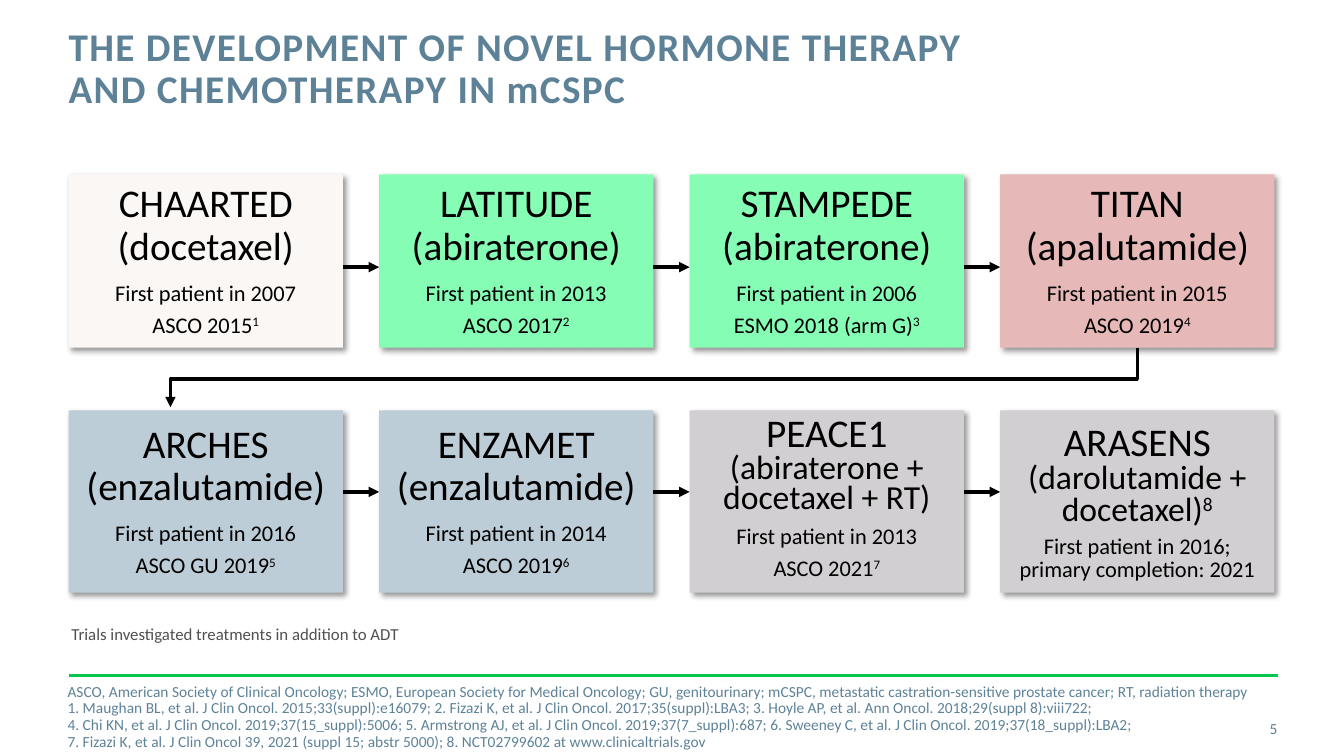
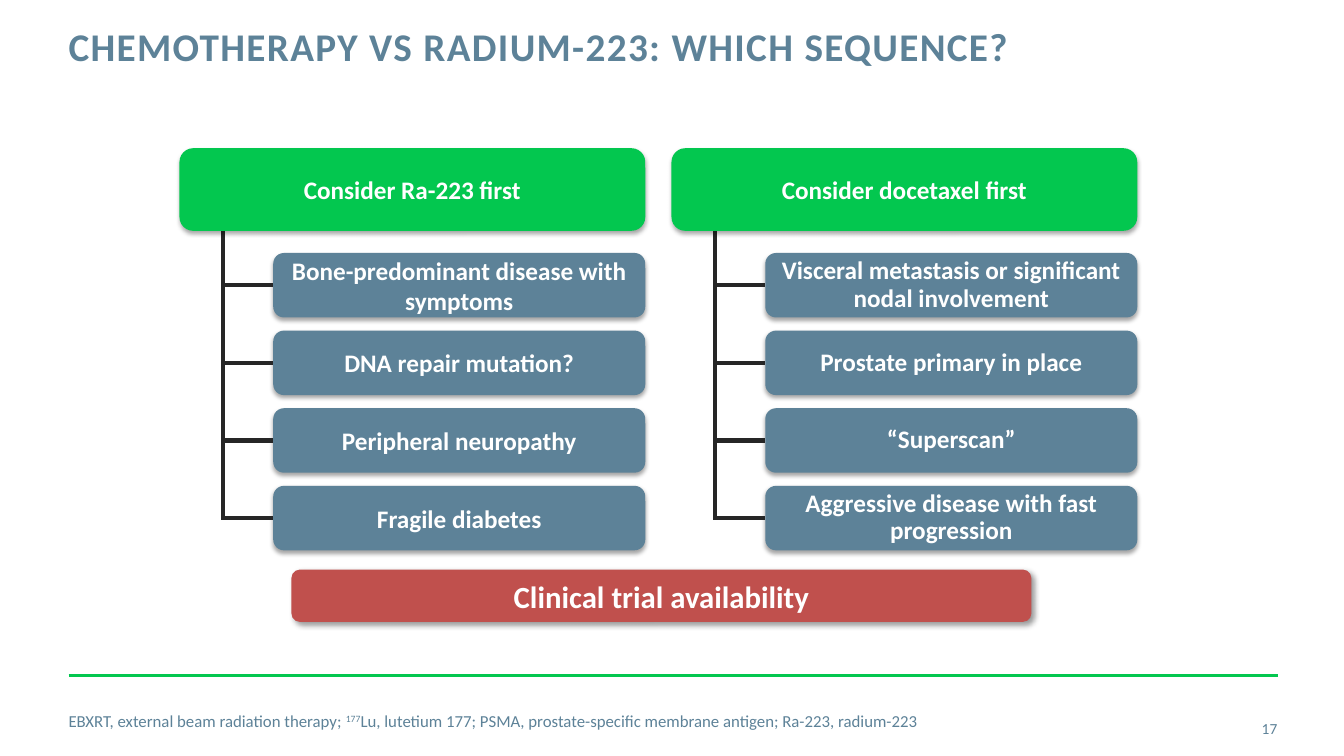
from lxml.etree import SubElement
from pptx import Presentation
from pptx.dml.color import RGBColor
from pptx.enum.shapes import MSO_CONNECTOR, MSO_SHAPE
from pptx.enum.text import MSO_ANCHOR, MSO_AUTO_SIZE, PP_ALIGN
from pptx.oxml.ns import qn
from pptx.util import Pt

PX = 9144  # 100 px to the inch
FONT = "Calibri"
SLATE, GREEN, RED = "5D8298", "03C74F", "C0504D"
BLACK, WHITE, GREY, CHARCOAL = "000000", "FFFFFF", "505050", "262626"
OFF_WHITE, MINT, PINK, PALE_BLUE, SILVER = "FBF7F5", "86FDB4", "E6B9B8", "BDCDD7", "D1CFD1"
# Shadows: opacity %, blur pt, distance pt, direction in degrees
DIAGONAL_SHADOW = (40, 4, 3, 45)
DROP_SHADOW = (35, 3.1, 1.8, 90)


def px(*lengths):
    return [round(length * PX) for length in lengths]


def colour(value):
    return RGBColor.from_string(value)


# Text
def write(para, *spans, ink, bold=False, align=PP_ALIGN.LEFT, leading=None, after=0):
    """Add (text, size) spans; text between ^ marks is raised."""
    para.alignment = align
    para.line_spacing = leading
    para.space_before, para.space_after = Pt(0), Pt(after)
    for text, size in spans:
        for part, piece in enumerate(text.split("^")):
            for row, line in enumerate(piece.split("\n")):
                if row:
                    para.add_line_break()
                if not line:
                    continue
                span = para.add_run()
                span.text = line
                span.font.name, span.font.size, span.font.bold = FONT, Pt(size), bold
                span.font.color.rgb = colour(ink)
                if part % 2:
                    span.font._element.set("baseline", "30000")


def set_frame(box, anchor, margins=(0, 0, 0, 0)):
    frame = box.text_frame
    frame.word_wrap = True
    frame.auto_size = MSO_AUTO_SIZE.NONE
    frame.vertical_anchor = anchor
    (frame.margin_left, frame.margin_top,
     frame.margin_right, frame.margin_bottom) = px(*margins)
    return frame


def place(box, bounds):
    box.left, box.top, box.width, box.height = px(*bounds)


# Shapes and lines
def add_panel(page, kind, bounds, fill, shadow, margins):
    panel = page.shapes.add_shape(kind, *px(*bounds))
    panel.fill.solid()
    panel.fill.fore_color.rgb = colour(fill)
    panel.line.fill.background()
    panel.shadow.inherit = False
    opacity, blur, distance, direction = shadow
    effects = panel._element.spPr.find(qn("a:effectLst"))
    outer = SubElement(effects, qn("a:outerShdw"), blurRad=str(Pt(blur)), dist=str(Pt(distance)),
                       dir=str(direction * 60000), algn="t", rotWithShape="0")
    tint = SubElement(outer, qn("a:srgbClr"), val=BLACK)
    SubElement(tint, qn("a:alpha"), val=str(opacity * 1000))
    set_frame(panel, MSO_ANCHOR.MIDDLE, margins)
    return panel


def style_line(line, ink, width, arrow=False):
    line.line.color.rgb = colour(ink)
    line.line.width = Pt(width)
    if arrow:
        SubElement(line._element.spPr.find(qn("a:ln")), qn("a:tailEnd"), type="triangle")


def add_line(page, start, end, ink, width, arrow=False):
    line = page.shapes.add_connector(MSO_CONNECTOR.STRAIGHT, *px(*start, *end))
    style_line(line, ink, width, arrow)
    SubElement(line._element.spPr, qn("a:effectLst"))
    return line


# Shared slide frame: title, green rule, footnote and page number
def add_page(deck, title, number, footnote, footnote_bounds, size, leading):
    page = deck.slides.add_slide(deck.slide_layouts[1])
    add_line(page, (68, 670), (1268, 670), GREEN, 2)

    heading = page.shapes.title
    place(heading, (68, 27, 956, 88))
    para = set_frame(heading, MSO_ANCHOR.TOP).paragraphs[0]
    write(para, (title, 28), ink=SLATE, bold=True, leading=Pt(30))
    for span in para.runs:
        span.font._element.set("spc", "100")

    body = page.placeholders[1]
    place(body, footnote_bounds)
    frame = set_frame(body, MSO_ANCHOR.MIDDLE)
    for index, text in enumerate(footnote):
        para = frame.add_paragraph() if index else frame.paragraphs[0]
        properties = para._p.get_or_add_pPr()
        properties.set("marL", "0")
        properties.set("indent", "0")
        SubElement(properties, qn("a:buNone"))
        write(para, (text, size), ink=SLATE, leading=leading, after=3 if index else 0)

    number_box = page.shapes.add_textbox(*px(1181, 703, 86, 40))
    frame = set_frame(number_box, MSO_ANCHOR.MIDDLE)
    write(frame.paragraphs[0], (number, 11), ink=SLATE, align=PP_ALIGN.RIGHT)
    return page


# Trial timeline
def add_trial(page, bounds, fill, paragraphs, top_margin=9):
    panel = add_panel(page, MSO_SHAPE.RECTANGLE, bounds, fill, DIAGONAL_SHADOW,
                      (9, top_margin, 9, 9))
    frame = panel.text_frame
    for index, (spans, leading, after) in enumerate(paragraphs):
        para = frame.add_paragraph() if index else frame.paragraphs[0]
        write(para, *spans, ink=BLACK, align=PP_ALIGN.CENTER, leading=leading, after=after)


def lines_of(*texts, size=16):
    return [([(text, size)], 0.9, 0.35 * size) for text in texts]


def trial_text(name, *details):
    return lines_of(name, size=28) + lines_of(*details)


def add_trial_row(page, left, top, height, arrow_y, trials):
    width, pitch = 272, 308
    for column, trial in enumerate(trials):
        x = left + column * pitch
        add_trial(page, (x, top, width, height), *trial)
        if column:
            add_line(page, (x - pitch + width, arrow_y), (x, arrow_y), BLACK, 2.5, True)


def add_return_arrow(page, start, turn_y, end):
    points = [px(*point) for point in (start, (start[0], turn_y), (end[0], turn_y), end)]
    builder = page.shapes.build_freeform(*points[0], scale=1.0)
    builder.add_line_segments(points[1:], close=False)
    arrow = builder.convert_to_shape()
    arrow.fill.background()
    arrow.shadow.inherit = False
    style_line(arrow, BLACK, 2.5, True)


def add_trials_page(deck):
    page = add_page(
        deck, "THE DEVELOPMENT OF NOVEL HORMONE THERAPY AND CHEMOTHERAPY IN mCSPC", "5",
        ["ASCO, American Society of Clinical Oncology; ESMO, European Society for Medical Oncology; "
         "GU, genitourinary; mCSPC, metastatic castration-sensitive prostate cancer; "
         "RT, radiation therapy",
         "1. Maughan BL, et al. J Clin Oncol. 2015;33(suppl):e16079; "
         "2. Fizazi K, et al. J Clin Oncol. 2017;35(suppl):LBA3; "
         "3. Hoyle AP, et al. Ann Oncol. 2018;29(suppl 8):viii722;\n"
         "4. Chi KN, et al. J Clin Oncol. 2019;37(15_suppl):5006; "
         "5. Armstrong AJ, et al. J Clin Oncol. 2019;37(7_suppl):687; "
         "6. Sweeney C, et al. J Clin Oncol. 2019;37(18_suppl):LBA2;\n"
         "7. Fizazi K, et al. J Clin Oncol 39, 2021 (suppl 15; abstr 5000); "
         "8. NCT02799602 at www.clinicaltrials.gov"],
        (67, 670, 1200, 83), 11, 0.9)

    add_trial_row(page, 68, 173, 172, 265, [
        (OFF_WHITE, trial_text("CHAARTED\n(docetaxel)", "First patient in 2007", "ASCO 2015^1")),
        (MINT, trial_text("LATITUDE\n(abiraterone)", "First patient in 2013", "ASCO 2017^2")),
        (MINT, trial_text("STAMPEDE\n(abiraterone)", "First patient in 2006",
                          "ESMO 2018 (arm G)^3")),
        (PINK, trial_text("TITAN\n(apalutamide)", "First patient in 2015", "ASCO 2019^4")),
    ])
    add_return_arrow(page, (1128, 345), 376, (169, 404))

    # Combination trials use tighter fixed leading
    peace = [([("PEACE1\n", 28), ("(abiraterone + docetaxel + RT)", 24)], Pt(21.8), 6)]
    peace += lines_of("First patient in 2013", "ASCO 2021^7")
    arasens = [([("ARASENS\n", 28), ("(darolutamide + docetaxel)^8", 24)], Pt(22.8), 6),
               ([("First patient in 2016;\nprimary completion: 2021", 16)], Pt(16.2), 5.6)]
    add_trial_row(page, 68, 407, 181, 488, [
        (PALE_BLUE, trial_text("ARCHES\n(enzalutamide)", "First patient in 2016",
                               "ASCO GU 2019^5")),
        (PALE_BLUE, trial_text("ENZAMET\n(enzalutamide)", "First patient in 2014",
                               "ASCO 2019^6")),
        (SILVER, peace, 12),
        (SILVER, arasens, 20),
    ])

    # Remark under the timeline
    remark = page.shapes.add_textbox(*px(61, 614, 349, 30))
    remark.text_frame.word_wrap = False
    write(remark.text_frame.paragraphs[0],
          ("Trials investigated treatments in addition to ADT", 12), ink=GREY)


# Treatment sequence
def add_label(page, bounds, fill, text, size=18, leading=None, shadow=DROP_SHADOW):
    label = add_panel(page, MSO_SHAPE.ROUNDED_RECTANGLE, bounds, fill, shadow, (10, 5, 10, 5))
    write(label.text_frame.paragraphs[0], (text, size), ink=WHITE, bold=True,
          align=PP_ALIGN.CENTER, leading=leading)
    return label


def add_choice(page, left, top, heading, reasons, leading=None):
    trunk_x, item_x, item_height, pitch = left + 43, left + 93, 64, 77
    first_y = top + 104
    last_middle = first_y + (len(reasons) - 1) * pitch + item_height / 2
    add_line(page, (trunk_x, top + 79), (trunk_x, last_middle + 2), CHARCOAL, 3)
    for index, reason in enumerate(reasons):
        y = first_y + index * pitch
        middle = y + item_height / 2
        item = add_label(page, (item_x, y, 369, item_height), SLATE, reason, leading=leading)
        branch = add_line(page, (trunk_x, middle), (item_x, middle), CHARCOAL, 3)
        branch.end_connect(item, 1)
    add_label(page, (left, top, 462, 82), GREEN, heading)


def add_sequence_page(deck):
    page = add_page(
        deck, "CHEMOTHERAPY VS RADIUM-223: WHICH SEQUENCE?", "17",
        ["EBXRT, external beam radiation therapy; ^177^Lu, lutetium 177; "
         "PSMA, prostate-specific membrane antigen; Ra-223, radium-223"],
        (68, 695, 888, 40), 12, None)
    add_choice(page, 178, 147, "Consider Ra-223 first", [
        "Bone-predominant disease with symptoms", "DNA repair mutation?",
        "Peripheral neuropathy", "Fragile diabetes"])
    add_choice(page, 666, 147, "Consider docetaxel first", [
        "Visceral metastasis or significant\nnodal involvement", "Prostate primary in place",
        "“Superscan”", "Aggressive disease with fast progression"], leading=0.9)
    add_label(page, (289, 565, 734, 52), RED, "Clinical trial availability", 22,
              shadow=DIAGONAL_SHADOW)


def main():
    deck = Presentation()
    deck.slide_width, deck.slide_height = px(1333, 750)
    add_trials_page(deck)
    add_sequence_page(deck)
    deck.save("out.pptx")


if __name__ == "__main__":
    main()
